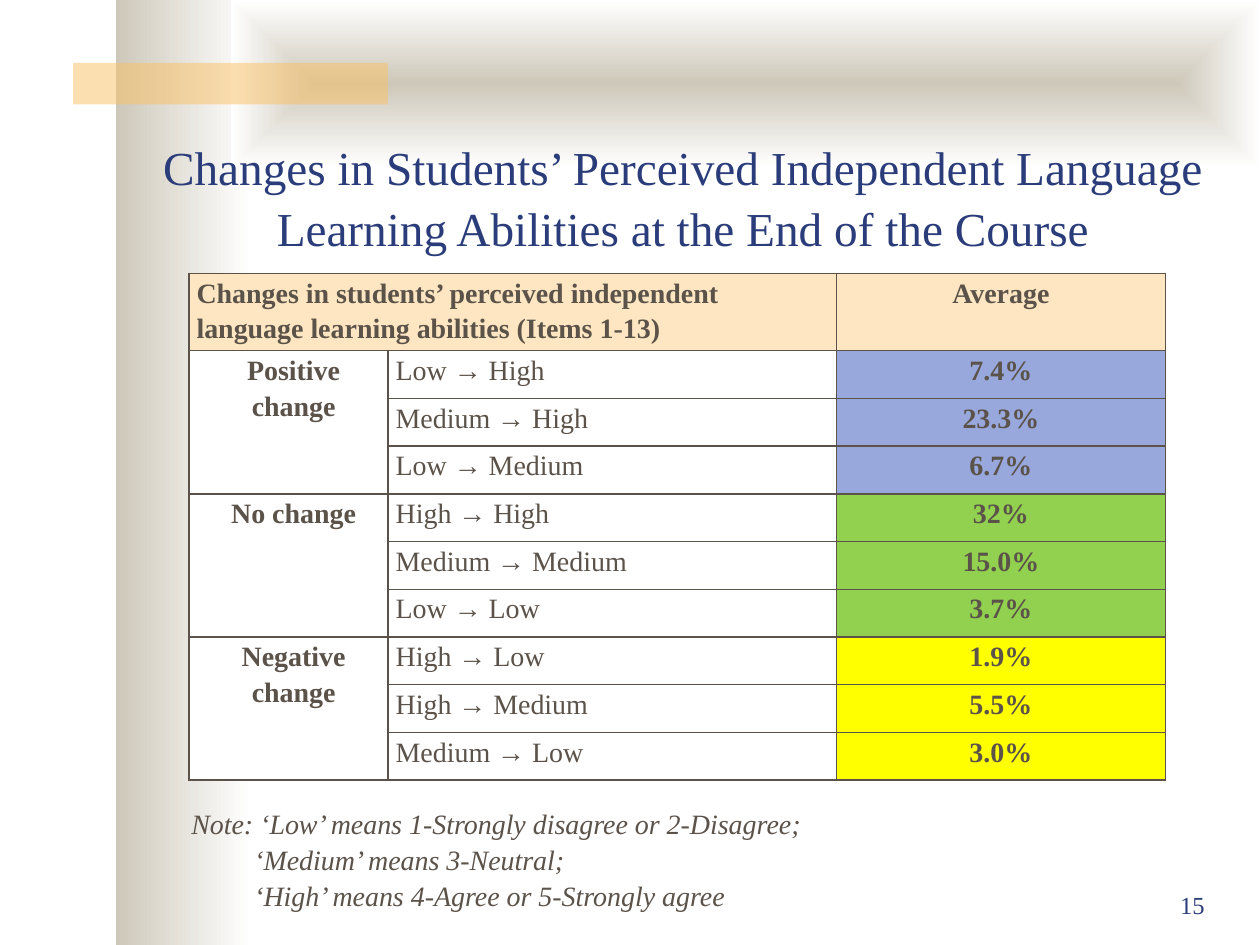
from lxml import etree
from pptx import Presentation
from pptx import util as u
from pptx.dml.color import RGBColor
from pptx.enum import shapes, text
from pptx.oxml import ns

FONT = "Times New Roman"
NAVY = RGBColor(0x2A, 0x3D, 0x7A)
BROWN = RGBColor(0x5B, 0x52, 0x49)
STONE = RGBColor(0xCE, 0xC8, 0xBA)
WHITE = RGBColor(0xFF, 0xFF, 0xFF)
AMBER = RGBColor(0xFA, 0xC1, 0x64)
CREAM = RGBColor(0xFD, 0xE6, 0xC1)
BLUE = RGBColor(0x98, 0xA8, 0xDC)
GREEN = RGBColor(0x92, 0xD0, 0x50)
YELLOW = RGBColor(0xFF, 0xFF, 0x00)

LEFT, CENTER, RIGHT = text.PP_ALIGN.LEFT, text.PP_ALIGN.CENTER, text.PP_ALIGN.RIGHT

TITLE = ("Changes in Students’ Perceived Independent Language "
         "Learning Abilities at the End of the Course")
HEADINGS = ("Changes in students’ perceived independent "
            "language learning abilities (Items 1-13)", "Average")
GROUPS = [
    ("Positive change", BLUE,
     [("Low → High", "7.4%"), ("Medium → High", "23.3%"), ("Low → Medium", "6.7%")]),
    ("No change", GREEN,
     [("High → High", "32%"), ("Medium → Medium", "15.0%"), ("Low → Low", "3.7%")]),
    ("Negative change", YELLOW,
     [("High → Low", "1.9%"), ("High → Medium", "5.5%"), ("Medium → Low", "3.0%")]),
]
NOTES = ["Note: ‘Low’ means 1-Strongly disagree or 2-Disagree;",
         "‘Medium’ means 3-Neutral;",
         "‘High’ means 4-Agree or 5-Strongly agree"]


def add_child(parent, tag, **attributes):
    return etree.SubElement(parent, ns.qn(tag), **attributes)


def style(paragraph, size, color, align=LEFT, spacing=1.08, bold=False, italic=False):
    paragraph.alignment = align
    paragraph.line_spacing = spacing
    for run in paragraph.runs:
        font = run.font
        font.name, font.size, font.color.rgb = FONT, u.Pt(size), color
        font.bold, font.italic = bold, italic


def add_text(slide, box, lines, anchor=text.MSO_ANCHOR.TOP, **look):
    frame = slide.shapes.add_textbox(*map(u.Inches, box)).text_frame
    frame.word_wrap = True
    frame.vertical_anchor = anchor
    frame.text = "\n".join(lines)
    for paragraph in frame.paragraphs:
        style(paragraph, **look)
    return frame


def add_panel(slide, box):
    shape = slide.shapes.add_shape(shapes.MSO_SHAPE.RECTANGLE, *map(u.Inches, box))
    shape.shadow.inherit = False
    shape.line.fill.background()
    return shape


def add_gradient(shape, from_center=False):
    shape.fill.gradient()
    shape.fill.gradient_angle = 0
    for stop, color in zip(shape.fill.gradient_stops, (STONE, WHITE)):
        stop.color.rgb = color
    if from_center:
        linear = shape._element.spPr.find(".//" + ns.qn("a:lin"))
        gradient = linear.getparent()
        gradient.remove(linear)
        route = add_child(gradient, "a:path", path="shape")
        add_child(route, "a:fillToRect", l="50000", t="50000", r="50000", b="50000")


def add_backdrop(slide, width, height):
    # Side strip, top band and translucent accent bar
    add_gradient(add_panel(slide, (0.92, 0, 1.08, height)))
    add_gradient(add_panel(slide, (1.83, 0, width - 1.83, 1.33)), from_center=True)
    bar = add_panel(slide, (0.58, 0.5, 2.5, 0.33))
    bar.fill.solid()
    bar.fill.fore_color.rgb = AMBER
    color = bar._element.spPr.find(".//" + ns.qn("a:srgbClr"))
    add_child(color, "a:alpha", val="50000")


def prepare_cell(cell, fill):
    cell.margin_left = cell.margin_right = u.Inches(0.06)
    cell.margin_top = cell.margin_bottom = 0
    properties = cell._tc.get_or_add_tcPr()
    for side in ("a:lnL", "a:lnR", "a:lnT", "a:lnB"):
        line = add_child(properties, side, w=str(u.Pt(1)))
        add_child(add_child(line, "a:solidFill"), "a:srgbClr", val=str(BROWN))
    cell.fill.solid()
    cell.fill.fore_color.rgb = fill


def write_cell(cell, words, align=LEFT, bold=True):
    cell.text_frame.text = words
    style(cell.text_frame.paragraphs[0], 16, BROWN, align, 1.15, bold)


def add_results(slide, box):
    left, top, width, height = box
    row_count = 1 + sum(len(changes) for _, _, changes in GROUPS)
    table = slide.shapes.add_table(row_count, 3, *map(u.Inches, box)).table
    table.first_row = table.horz_banding = False
    for column, share in zip(table.columns, (0.204, 0.459, 0.337)):
        column.width = u.Inches(width * share)
    header_height = 0.57
    for index, row in enumerate(table.rows):
        row.height = u.Inches((height - header_height) / (row_count - 1)
                              if index else header_height)

    # Fills and borders, row by row
    value_fills = [CREAM] + [fill for _, fill, changes in GROUPS for _ in changes]
    for index, fill in enumerate(value_fills):
        label_fill = WHITE if index else CREAM
        for column, cell_fill in enumerate((label_fill, label_fill, fill)):
            prepare_cell(table.cell(index, column), cell_fill)

    # Heading row
    table.cell(0, 0).merge(table.cell(0, 1))
    write_cell(table.cell(0, 0), HEADINGS[0])
    write_cell(table.cell(0, 2), HEADINGS[1], CENTER)

    # Groups of changes
    index = 1
    for name, _, changes in GROUPS:
        label = table.cell(index, 0)
        label.merge(table.cell(index + len(changes) - 1, 0))
        write_cell(label, name, CENTER)
        label.text_frame.paragraphs[0]._p.get_or_add_pPr().set("marL", str(u.Inches(0.08)))
        for change, average in changes:
            write_cell(table.cell(index, 1), change, bold=False)
            write_cell(table.cell(index, 2), average, CENTER)
            index += 1


def add_notes_block(slide, box):
    frame = add_text(slide, box, NOTES, size=16, color=BROWN, italic=True)
    for paragraph in frame.paragraphs[1:]:
        paragraph._p.get_or_add_pPr().set("marL", str(u.Inches(0.5)))


def main():
    presentation = Presentation()
    width, height = 10, 7.5
    presentation.slide_width, presentation.slide_height = u.Inches(width), u.Inches(height)
    slide = presentation.slides.add_slide(presentation.slide_layouts[6])
    add_backdrop(slide, width, height)
    add_text(slide, (1.17, 0.92, 8.5, 1.25), [TITLE], text.MSO_ANCHOR.MIDDLE,
             size=27, color=NAVY, align=CENTER)
    add_results(slide, (1.5, 2.17, 7.75, 3.98))
    add_text(slide, (7.58, 7, 2.08, 0.5), ["15"], size=14, color=NAVY, align=RIGHT)
    add_notes_block(slide, (1.42, 6.33, 7.17, 0.91))
    presentation.save("out.pptx")


if __name__ == "__main__":
    main()
